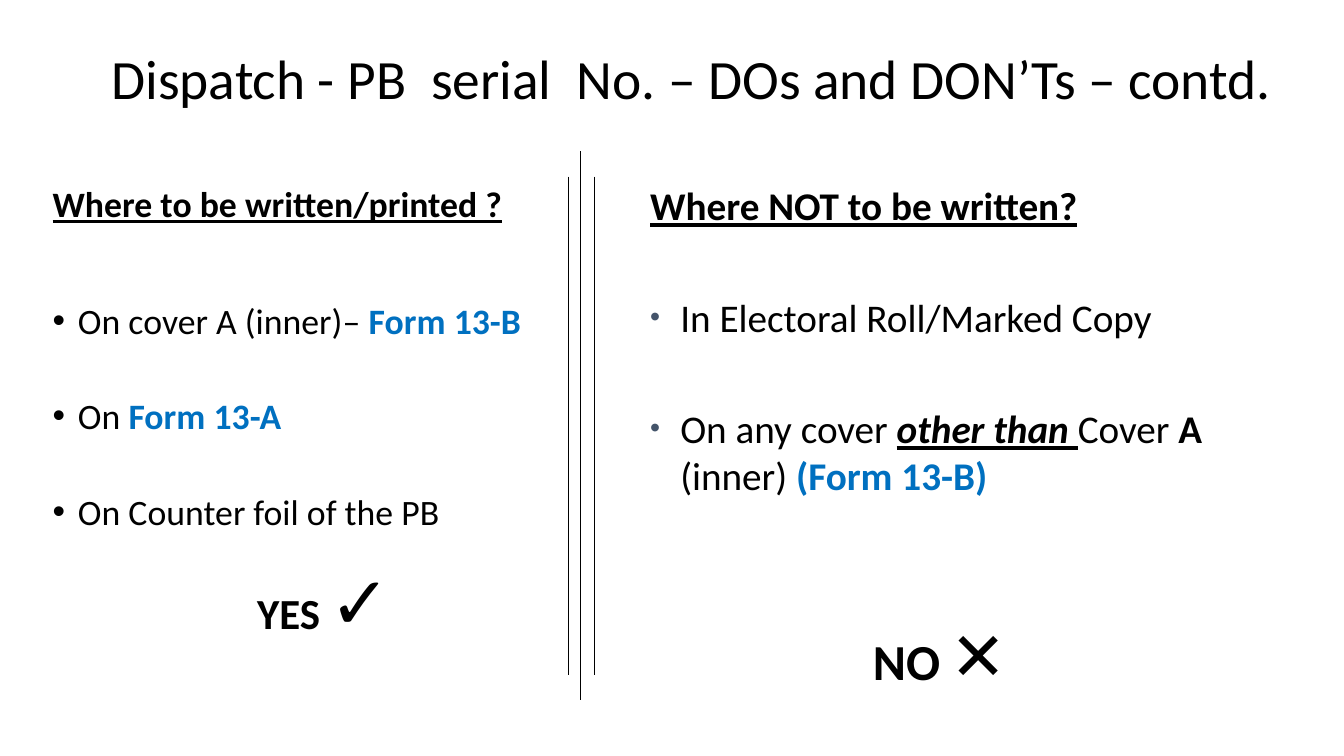
import pptx
import pptx.util
import pptx.dml.color
import pptx.enum.shapes
import pptx.enum.text
import lxml.etree

Cm, Pt = pptx.util.Cm, pptx.util.Pt
ALIGN = pptx.enum.text.PP_ALIGN
COLORS = {"ink": "000000", "paper": "FFFFFF", "form": "0070C0", "bullet": "44546A"}

TITLE = "Dispatch - PB  serial  No. – DOs and DON’Ts – contd."
TITLE_BOX = (1.9, 1.27, 31.04, 1.57)

# Run styles: font settings that differ from the paragraph
FORM = {"bold": True, "color": "form"}
BOLD = {"bold": True}
STRESSED = {"bold": True, "italic": True, "underline": True}
HEADING = {"bold": True, "underline": True}

# Each paragraph: kind, line spacing, space before (pt), runs of (text, style)
COLUMNS = [
    {
        "box": (1.07, 4.67, 13.23, 12.47),
        "size": 25.5, "indent": 0.64, "verdict_indent": 0.98,
        "bullet_color": "ink", "bullet_percent": 100,
        "paragraphs": [
            ("heading", 0.8, 10, [("Where to be written/printed ?", HEADING)]),
            ("bullet", 2.4, 10, [("On cover A (inner)– ", {}), ("Form 13-B", FORM)]),
            ("bullet", 1.9, 10, [("On ", {}), ("Form 13-A", FORM)]),
            ("bullet", 1.9, 10, [("On Counter foil of the PB", {})]),
            ("verdict", 1.1, 10, [
                ("YES ", {"size": 30.6, "bold": True}),
                ("✓", {"size": 52.7, "name": "Arial", "italic": True})]),
        ],
    },
    {
        "box": (16.13, 4.45, 15.11, 12.7),
        "size": 28, "indent": 0.76, "verdict_indent": 0,
        "bullet_color": "bullet", "bullet_percent": 73,
        "paragraphs": [
            ("heading", 1.0, 6, [("Where NOT to be written?", HEADING)]),
            ("bullet", 1.0, 46, [("In Electoral Roll/Marked Copy", {})]),
            ("bullet", 1.0, 46, [
                ("On any cover ", {}), ("other than ", STRESSED), ("Cover ", {}),
                ("A ", BOLD), ("(inner) ", {}), ("(Form 13-B)", FORM)]),
            ("verdict", 1.0, 81.5, [
                ("NO", {"size": 36, "bold": True}), (" ", {"size": 32}),
                ("✕", {"size": 48, "name": "Arial", "italic": True})]),
        ],
    },
]

# Divider lines: x, top, bottom
DIVIDERS = [(14.33, 4.45, 17.02), (14.99, 4.45, 17.02), (14.63, 3.81, 17.65)]


def rgb(name):
    return pptx.dml.color.RGBColor.from_string(COLORS[name])


def style_font(font, size=None, color=None, **settings):
    if size:
        font.size = Pt(size)
    if color:
        font.color.rgb = rgb(color)
    for key, value in settings.items():
        setattr(font, key, value)


def place(shape, box):
    shape.left, shape.top, shape.width, shape.height = map(Cm, box)


def add_child(parent, tag, **attributes):
    namespace = pptx.oxml.ns.qn("a:" + tag)
    return lxml.etree.SubElement(parent, namespace, attributes)


def set_bullet(paragraph, kind, column):
    """Set the indent, and a bullet or none."""
    properties = paragraph._p.get_or_add_pPr()
    bulleted = kind == "bullet"
    left = {"heading": 0, "bullet": column["indent"],
            "verdict": column["verdict_indent"]}[kind]
    properties.set("marL", str(Cm(left)))
    properties.set("indent", str(-Cm(left) if bulleted else 0))
    if bulleted:
        color = add_child(properties, "buClr")
        add_child(color, "srgbClr", val=COLORS[column["bullet_color"]])
        add_child(properties, "buSzPct", val=str(column["bullet_percent"] * 1000))
        add_child(properties, "buFont", typeface="Arial")
        add_child(properties, "buChar", char="•")
    else:
        add_child(properties, "buNone")


def fill_column(placeholder, column):
    place(placeholder, column["box"])
    frame = placeholder.text_frame
    frame.word_wrap = True
    frame.auto_size = pptx.enum.text.MSO_AUTO_SIZE.NONE
    frame.vertical_anchor = pptx.enum.text.MSO_ANCHOR.TOP
    for index, (kind, spacing, before, runs) in enumerate(column["paragraphs"]):
        paragraph = frame.add_paragraph() if index else frame.paragraphs[0]
        paragraph.alignment = ALIGN.CENTER if kind == "verdict" else ALIGN.LEFT
        paragraph.line_spacing = spacing
        paragraph.space_before = Pt(before)
        set_bullet(paragraph, kind, column)
        for text, style in runs:
            run = paragraph.add_run()
            run.text = text
            base = {"name": "Calibri", "size": column["size"], "color": "ink"}
            style_font(run.font, **{**base, **style})


def add_title(slide):
    title = slide.shapes.title
    place(title, TITLE_BOX)
    title.fill.solid()
    title.fill.fore_color.rgb = rgb("paper")
    frame = title.text_frame
    frame.text = TITLE
    frame.auto_size = pptx.enum.text.MSO_AUTO_SIZE.NONE
    frame.vertical_anchor = pptx.enum.text.MSO_ANCHOR.MIDDLE
    paragraph = frame.paragraphs[0]
    paragraph.alignment = ALIGN.CENTER
    paragraph.line_spacing = 0.9
    style_font(paragraph.font, size=39.6, color="ink", name="Calibri")


def add_divider(slide, x, top, bottom):
    line = slide.shapes.add_connector(
        pptx.enum.shapes.MSO_CONNECTOR.STRAIGHT, Cm(x), Cm(top), Cm(x), Cm(bottom))
    line.line.color.rgb = rgb("ink")
    line.line.width = Pt(0.5)
    add_child(line._element.spPr, "effectLst")


def main():
    presentation = pptx.Presentation()
    presentation.slide_width, presentation.slide_height = Cm(33.87), Cm(19.05)
    two_content = presentation.slide_layouts.get_by_name("Two Content")
    slide = presentation.slides.add_slide(two_content)
    add_title(slide)
    for index, column in enumerate(COLUMNS, start=1):
        fill_column(slide.placeholders[index], column)
    for divider in DIVIDERS:
        add_divider(slide, *divider)
    presentation.save("out.pptx")


if __name__ == "__main__":
    main()
